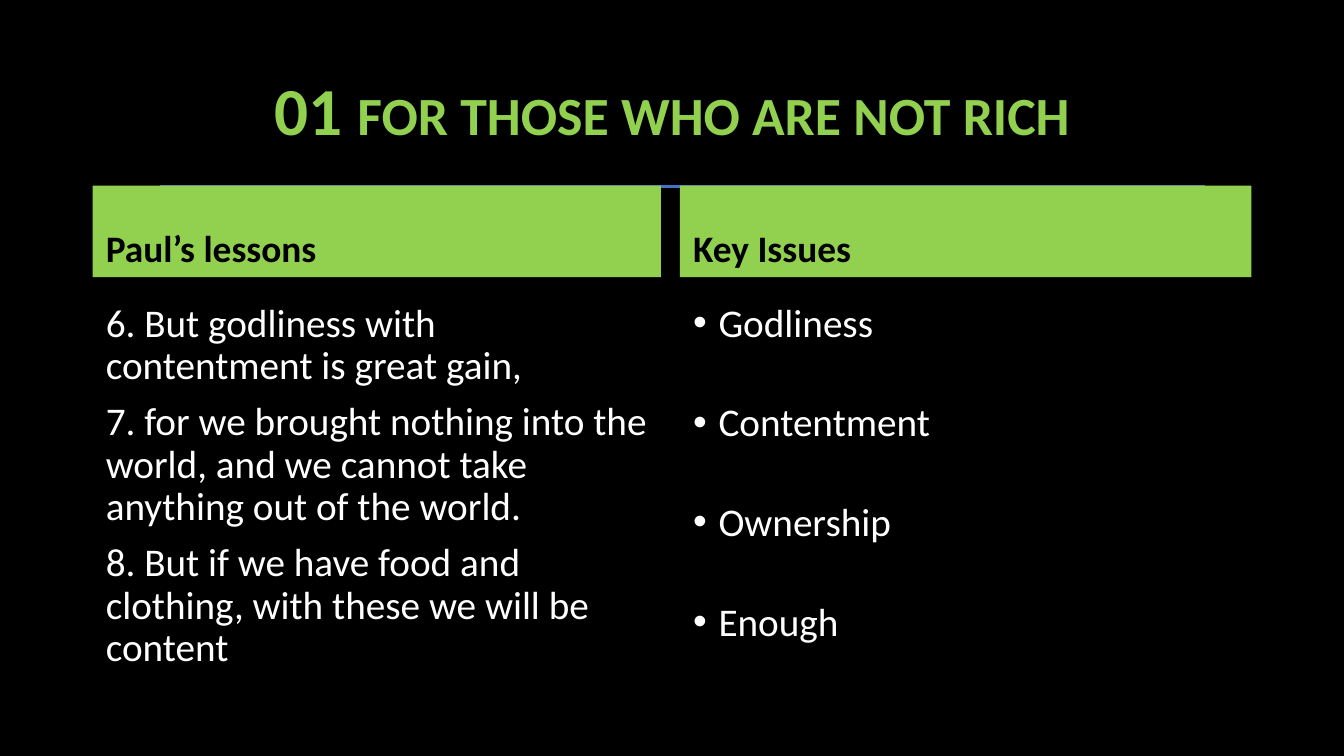
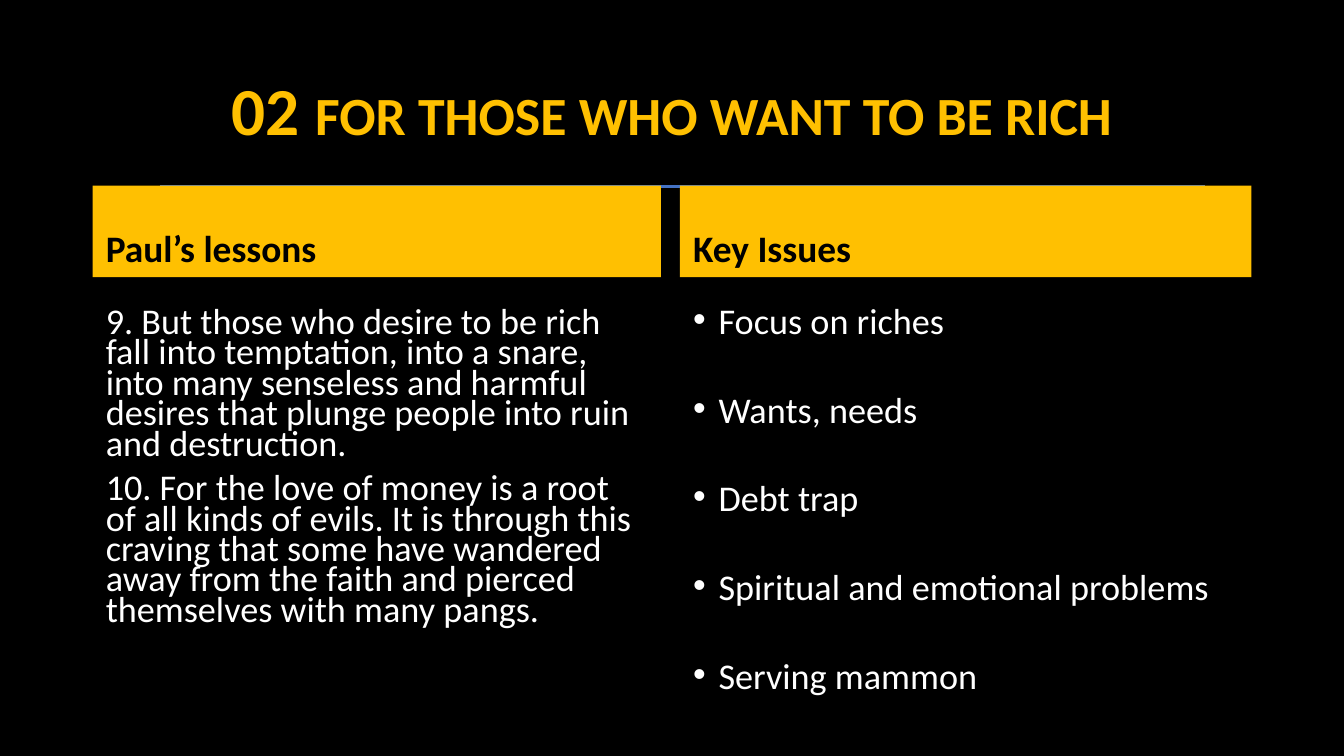
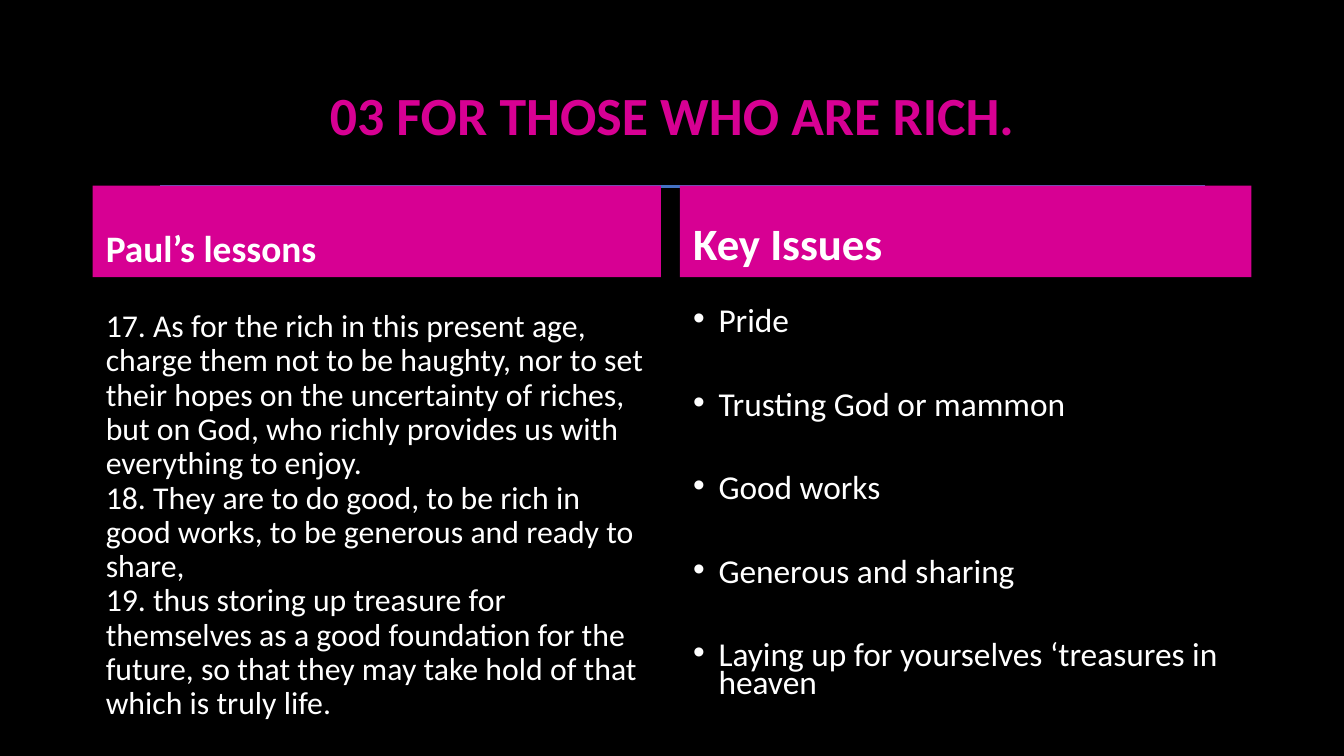
from pptx import Presentation
from pptx.dml.color import RGBColor
from pptx.enum.shapes import MSO_CONNECTOR, MSO_SHAPE
from pptx.enum.text import MSO_ANCHOR, PP_ALIGN
from pptx.oxml.ns import qn
from pptx.util import Cm, Pt
from lxml import etree

BLACK = RGBColor(0x00, 0x00, 0x00)
WHITE = RGBColor(0xFF, 0xFF, 0xFF)
GREEN = RGBColor(0x92, 0xD0, 0x50)
AMBER = RGBColor(0xFF, 0xC0, 0x01)
MAGENTA = RGBColor(0xD7, 0x00, 0x93)
BLUE = RGBColor(0x44, 0x72, 0xC4)

RECTANGLE = MSO_SHAPE.RECTANGLE
STRAIGHT = MSO_CONNECTOR.STRAIGHT
TOP, MIDDLE, BOTTOM = MSO_ANCHOR.TOP, MSO_ANCHOR.MIDDLE, MSO_ANCHOR.BOTTOM
LEFT, CENTER = PP_ALIGN.LEFT, PP_ALIGN.CENTER

FONT = "Calibri"
LESSONS_COLUMN = (Cm(1.75), Cm(10.74))
ISSUES_COLUMN = (Cm(12.85), Cm(10.8))
BULLET_INDENT = Cm(0.48)

SECTIONS = [
    {
        "title": [("01 ", False), ("for those who are not rich", True)],
        "accent": GREEN, "band_text": BLACK, "issues_heading_size": 20,
        "top": 5.61, "issues_height": 7.67,
        "lessons": [
            "6. But godliness with contentment is great gain,",
            "7. for we brought nothing into the world, and we cannot take anything out of the world.",
            "8. But if we have food and clothing, with these we will be content",
        ],
        "lessons_style": {"size": 21, "spacing": 0.9, "gap": 7.5},
        "issues": ["Godliness", "Contentment", "Ownership", "Enough"],
        "issues_style": {"size": 21, "spacing": 0.9, "gap": 30.7},
    },
    {
        "title": [("02 ", False), ("for those who want to be rich", True)],
        "accent": AMBER, "band_text": BLACK, "issues_heading_size": 20,
        "top": 5.74, "issues_height": 7.67,
        "lessons": [
            "9. But those who desire to be rich fall into temptation, into a snare, into many "
            "senseless and harmful desires that plunge people into ruin and destruction.",
            "10. For the love of money is a root of all kinds of evils. It is through this craving "
            "that some have wandered away from the faith and pierced themselves with many pangs.",
        ],
        "lessons_style": {"size": 19.4, "spacing": 0.7, "gap": 7.5},
        "issues": ["Focus on riches", "Wants, needs", "Debt trap",
                   "Spiritual and emotional problems", "Serving mammon"],
        "issues_style": {"size": 19.4, "spacing": 0.7, "gap": 31.2},
    },
    {
        "title": [("03 for those who are rich.", True)],
        "accent": MAGENTA, "band_text": WHITE, "issues_heading_size": 24,
        "top": 5.74, "issues_height": 8.56,
        "lessons": [
            "17. As for the rich in this present age, charge them not to be haughty, nor to set "
            "their hopes on the uncertainty of riches, but on God, who richly provides us with "
            "everything to enjoy.",
            "18. They are to do good, to be rich in good works, to be generous and ready to share,",
            "19. thus storing up treasure for themselves as a good foundation for the future, so "
            "that they may take hold of that which is truly life.",
        ],
        "lessons_style": {"size": 17, "spacing": 0.9, "gap": 0},
        "issues": ["Pride", "Trusting God or mammon", "Good works", "Generous and sharing",
                   "Laying up for yourselves ‘treasures in heaven"],
        "issues_style": {"size": 17.9, "spacing": 0.7, "gap": 29.7},
    },
]


def apply(target, values):
    for name, value in values.items():
        setattr(target, name, value)


class Deck:
    def __init__(self):
        self.presentation = Presentation()
        apply(self.presentation, {"slide_width": Cm(25.4), "slide_height": Cm(14.29)})
        self.slide = None

    def start_slide(self):
        self.slide = self.presentation.slides.add_slide(self.presentation.slide_layouts[6])
        background = self.slide.background.fill
        background.solid()
        background.fore_color.rgb = BLACK

    def rule(self):
        rule = self.slide.shapes.add_connector(STRAIGHT, Cm(3.02), Cm(3.53), Cm(22.78), Cm(3.53))
        rule.line.color.rgb = BLUE
        rule.line.width = Pt(1.75)
        etree.SubElement(rule._element.spPr, qn("a:effectLst"))

    def add_run(self, paragraph, text, size, color, bold):
        run = paragraph.add_run()
        run.text = text
        apply(run.font, {"name": FONT, "size": Pt(size), "bold": bold})
        run.font.color.rgb = color
        return run

    def title(self, parts, color):
        box = self.slide.shapes.add_textbox(LESSONS_COLUMN[0], Cm(0.76), Cm(21.9), Cm(2.77))
        apply(box.text_frame, {"word_wrap": True, "vertical_anchor": MIDDLE})
        paragraph = box.text_frame.paragraphs[0]
        apply(paragraph, {"alignment": CENTER, "line_spacing": 0.9})
        for text, small_caps in parts:
            run = self.add_run(paragraph, text, 36, color, True)
            if small_caps:
                run._r.get_or_add_rPr().set("cap", "small")

    def band(self, column, heading, size, color, fill):
        left, width = column
        band = self.slide.shapes.add_shape(RECTANGLE, left, Cm(3.51), width, Cm(1.73))
        band.shadow.inherit = False
        band.fill.solid()
        band.fill.fore_color.rgb = fill
        band.line.fill.background()
        apply(band.text_frame, {"word_wrap": True, "vertical_anchor": BOTTOM})
        paragraph = band.text_frame.paragraphs[0]
        apply(paragraph, {"alignment": LEFT, "line_spacing": 0.9})
        self.add_run(paragraph, heading, size, color, True)

    def body(self, column, top, height, texts, style, bulleted=False):
        left, width = column
        box = self.slide.shapes.add_textbox(left, Cm(top), width, Cm(height))
        frame = box.text_frame
        apply(frame, {"word_wrap": True, "vertical_anchor": TOP})
        for index, text in enumerate(texts):
            paragraph = frame.add_paragraph() if index else frame.paragraphs[0]
            apply(paragraph, {
                "alignment": LEFT,
                "line_spacing": style["spacing"],
                "space_before": Pt(style["gap"] if index else 0),
            })
            if bulleted:
                self.add_bullet(paragraph)
            self.add_run(paragraph, text, style["size"], WHITE, False)

    def add_bullet(self, paragraph):
        properties = paragraph._p.get_or_add_pPr()
        properties.set("marL", str(BULLET_INDENT))
        properties.set("indent", str(-BULLET_INDENT))
        etree.SubElement(properties, qn("a:buFont")).set("typeface", "Arial")
        etree.SubElement(properties, qn("a:buChar")).set("char", "•")


def main():
    deck = Deck()
    for section in SECTIONS:
        accent, band_text, top = section["accent"], section["band_text"], section["top"]
        deck.start_slide()
        deck.rule()
        deck.title(section["title"], accent)
        deck.band(LESSONS_COLUMN, "Paul’s lessons", 20, band_text, accent)
        deck.body(LESSONS_COLUMN, top, 7.67, section["lessons"], section["lessons_style"])
        deck.band(ISSUES_COLUMN, "Key Issues", section["issues_heading_size"], band_text, accent)
        deck.body(ISSUES_COLUMN, top, section["issues_height"], section["issues"],
                  section["issues_style"], bulleted=True)
    deck.presentation.save("out.pptx")


if __name__ == "__main__":
    main()
